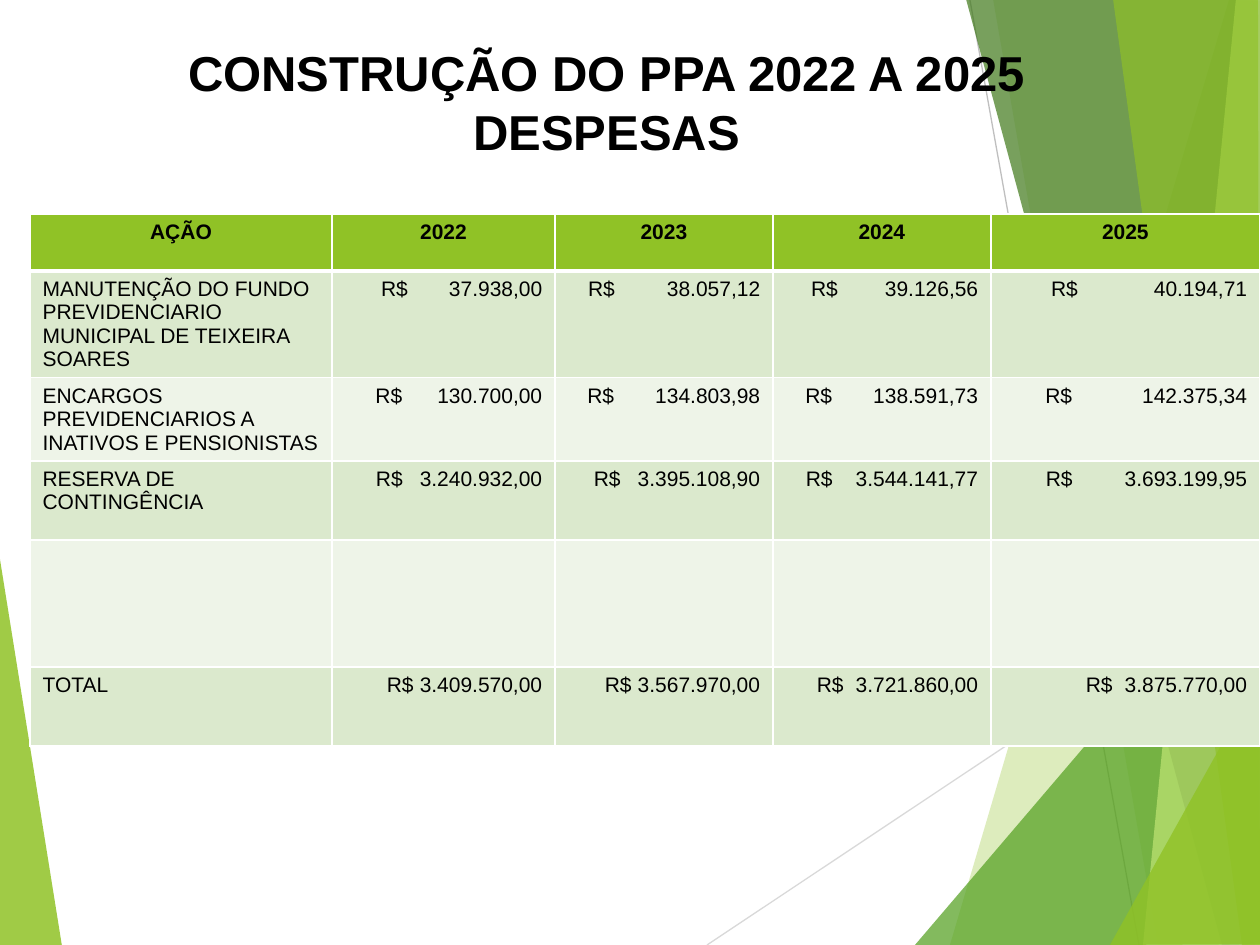
from lxml.etree import SubElement
from pptx import Presentation
from pptx.dml.color import RGBColor
from pptx.enum.shapes import MSO_CONNECTOR as Connector
from pptx.enum.text import MSO_ANCHOR as Anchor, MSO_AUTO_SIZE as AutoSize, PP_ALIGN as Align
from pptx.oxml import parse_xml
from pptx.oxml.ns import nsdecls, qn
from pptx.util import Pt

PX = 914400 / 126
SPACE_PX = 5.83
COLORS = {
    "black": "000000", "white": "FFFFFF", "lime": "90C226", "green": "54A021",
    "forest": "3F7819", "pale": "C0E474", "band_dark": "DBE9CD",
    "band_light": "EEF4E8", "line_light": "D9D9D9", "line_gray": "BFBFBF",
}
LEFT_WEDGE = ("lime", 85, [(-1, 553), (62, 946), (-1, 945)])
RIGHT_PANELS = [
    ("lime", 30, [(1229, 0), (950, 945), (1262, 946), (1261, 1)]),
    ("lime", 20, [(993, -1), (1158, 945), (1261, 945), (1261, -1)]),
    ("green", 72, [(915, 945), (1260, 541), (1261, 945)]),
    ("forest", 70, [(966, -1), (1222, 945), (1261, 944), (1261, -1)]),
    ("pale", 70, [(1236, -1), (1143, 945), (1261, 945), (1260, -1)]),
    ("lime", 65, [(1113, -1), (1242, 945), (1260, 945), (1258, -1)]),
    ("lime", 80, [(1110, 945), (1261, 674), (1261, 944)]),
]
COLUMNS = [302, 223, 218, 218, 269]
ROWS = [57, 79, 73, 79, 127, 79]
HEADINGS = ["AÇÃO", "2022", "2023", "2024", "2025"]
EXPENSES = [
    ("MANUTENÇÃO DO FUNDO PREVIDENCIARIO MUNICIPAL DE TEIXEIRA SOARES",
     [("37.938,00", 41), ("38.057,12", 52), ("39.126,56", 47), ("40.194,71", 76)]),
    ("ENCARGOS PREVIDENCIARIOS A INATIVOS E PENSIONISTAS",
     [("130.700,00", 35), ("134.803,98", 41), ("138.591,73", 41), ("142.375,34", 70)]),
    ("RESERVA DE CONTINGÊNCIA",
     [("3.240.932,00", 17), ("3.395.108,90", 17), ("3.544.141,77", 23), ("3.693.199,95", 52)]),
    ("", []),
    ("TOTAL",
     [("3.409.570,00", 6), ("3.567.970,00", 6), ("3.721.860,00", 12), ("3.875.770,00", 12)]),
]


def px(value):
    return round(value * PX)


def rgb(name):
    return RGBColor.from_string(COLORS[name])


class SlideBuilder:
    def __init__(self, page, font="Arial"):
        self.page = page
        self.font = font

    def style(self, para, size, bold=False, align=Align.LEFT):
        para.alignment = align
        for span in para.runs:
            span.font.name = self.font
            span.font.size = Pt(size)
            span.font.bold = bold
            span.font.color.rgb = rgb("black")

    def title(self, text, left, top, width, height):
        box = self.page.shapes.title
        box.left, box.top, box.width, box.height = map(px, (left, top, width, height))
        frame = box.text_frame
        frame.text = text
        frame.word_wrap = True
        frame.auto_size = AutoSize.NONE
        frame.vertical_anchor = Anchor.MIDDLE
        for para in frame.paragraphs:
            self.style(para, 28, True, Align.CENTER)
        box.element.getparent().append(box.element)

    def panel(self, color, opacity, points):
        builder = self.page.shapes.build_freeform(*points[0], scale=PX)
        builder.add_line_segments(points[1:], close=True)
        shape = builder.convert_to_shape()
        shape.shadow.inherit = False
        shape.fill.solid()
        shape.fill.fore_color.rgb = rgb(color)
        shape.line.fill.background()
        tint = shape.element.spPr.find(qn("a:solidFill")).find(qn("a:srgbClr"))
        SubElement(tint, qn("a:alpha"), val=str(opacity * 1000))

    def line(self, color, start, end):
        rule = self.page.shapes.add_connector(Connector.STRAIGHT, *map(px, start + end))
        rule.line.color.rgb = rgb(color)
        rule.line.width = Pt(0.75)
        SubElement(rule.element.spPr, qn("a:effectLst"))

    def cell(self, cell, fill, top=1, bottom=1):
        properties = cell._tc.get_or_add_tcPr()
        for side, width in zip("LRTB", (1, 1, top, bottom)):
            properties.append(parse_xml(
                f'<a:ln{side} {nsdecls("a")} w="{Pt(width)}"><a:solidFill>'
                f'<a:srgbClr val="{COLORS["white"]}"/></a:solidFill></a:ln{side}>'))
        cell.fill.solid()
        cell.fill.fore_color.rgb = rgb(fill)

    def amount(self, cell, value, gap):
        para = cell.text_frame.paragraphs[0]
        for text in ("R$", " ", value):
            para.add_run().text = text
        self.style(para, 12, align=Align.RIGHT)
        tracking = round((gap - SPACE_PX) * 72 / 126 * 100)
        para.runs[1].font._element.set("spc", str(tracking))

    def table(self, left, top):
        frame = self.page.shapes.add_table(
            len(ROWS), len(COLUMNS), px(left), px(top), px(sum(COLUMNS)), px(sum(ROWS)))
        grid = frame.table
        for column, width in zip(grid.columns, COLUMNS):
            column.width = px(width)
        for row, height in zip(grid.rows, ROWS):
            row.height = px(height)
        for index, heading in enumerate(HEADINGS):
            cell = grid.cell(0, index)
            self.cell(cell, "lime", bottom=3)
            cell.text_frame.text = heading
            self.style(cell.text_frame.paragraphs[0], 12, True, Align.CENTER)
        for number, (action, amounts) in enumerate(EXPENSES, 1):
            for cell in grid.rows[number].cells:
                self.cell(cell, "band_dark" if number % 2 else "band_light",
                          top=3 if number == 1 else 1)
            label = grid.cell(number, 0)
            label.text_frame.text = action
            self.style(label.text_frame.paragraphs[0], 12)
            for index, (value, gap) in enumerate(amounts, 1):
                self.amount(grid.cell(number, index), value, gap)


def main():
    deck = Presentation()
    deck.slide_width, deck.slide_height = px(1260), px(945)
    slide = SlideBuilder(deck.slides.add_slide(deck.slide_layouts[5]))
    slide.panel(*LEFT_WEDGE)
    slide.line("line_light", (707, 945), (1261, 576))
    slide.line("line_gray", (970, 0), (1139, 945))
    for panel in RIGHT_PANELS:
        slide.panel(*panel)
    slide.table(30, 214)
    slide.title("CONSTRUÇÃO DO PPA 2022 A 2025\nDESPESAS", 74, 36, 1065, 130)
    deck.save("out.pptx")


if __name__ == "__main__":
    main()
